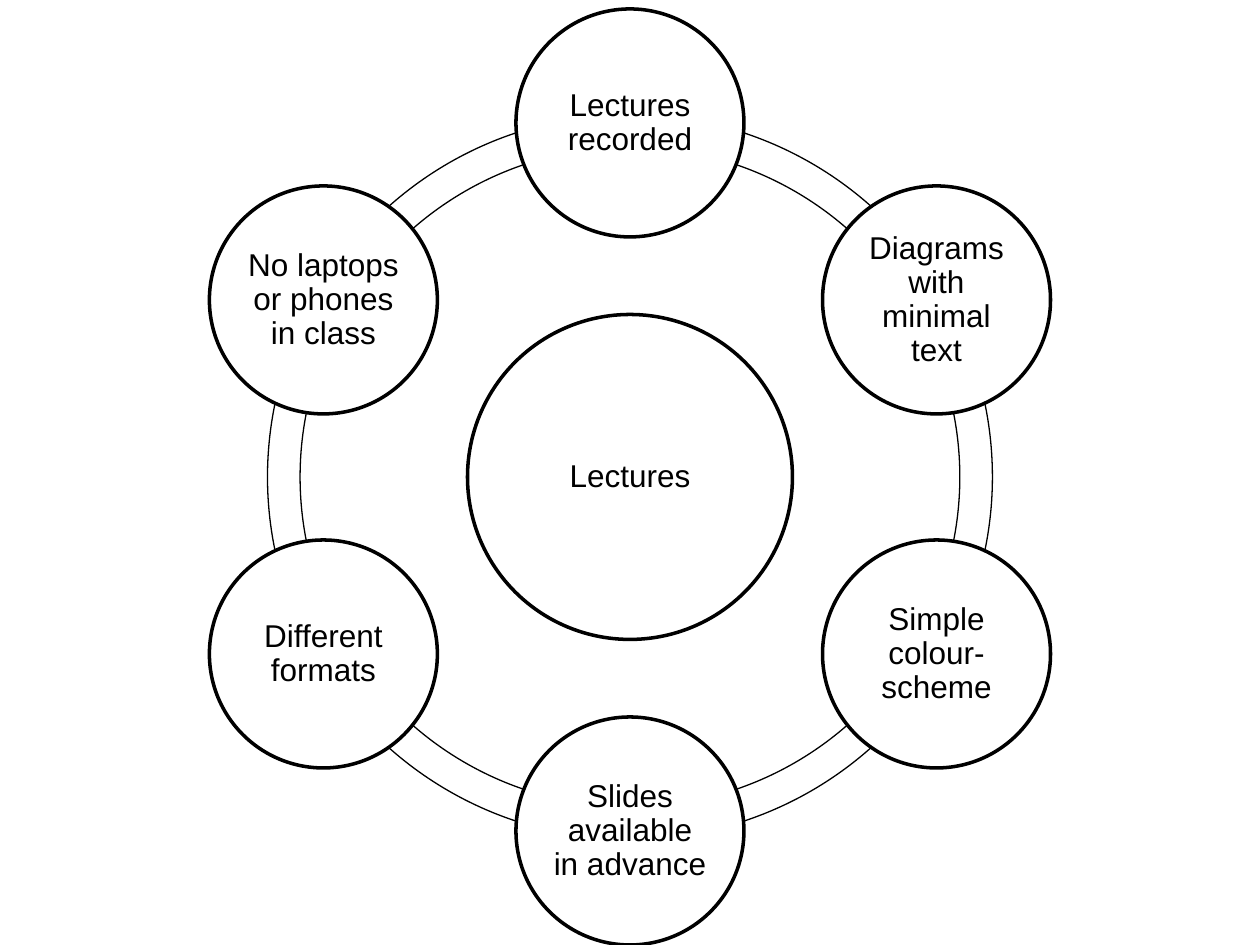
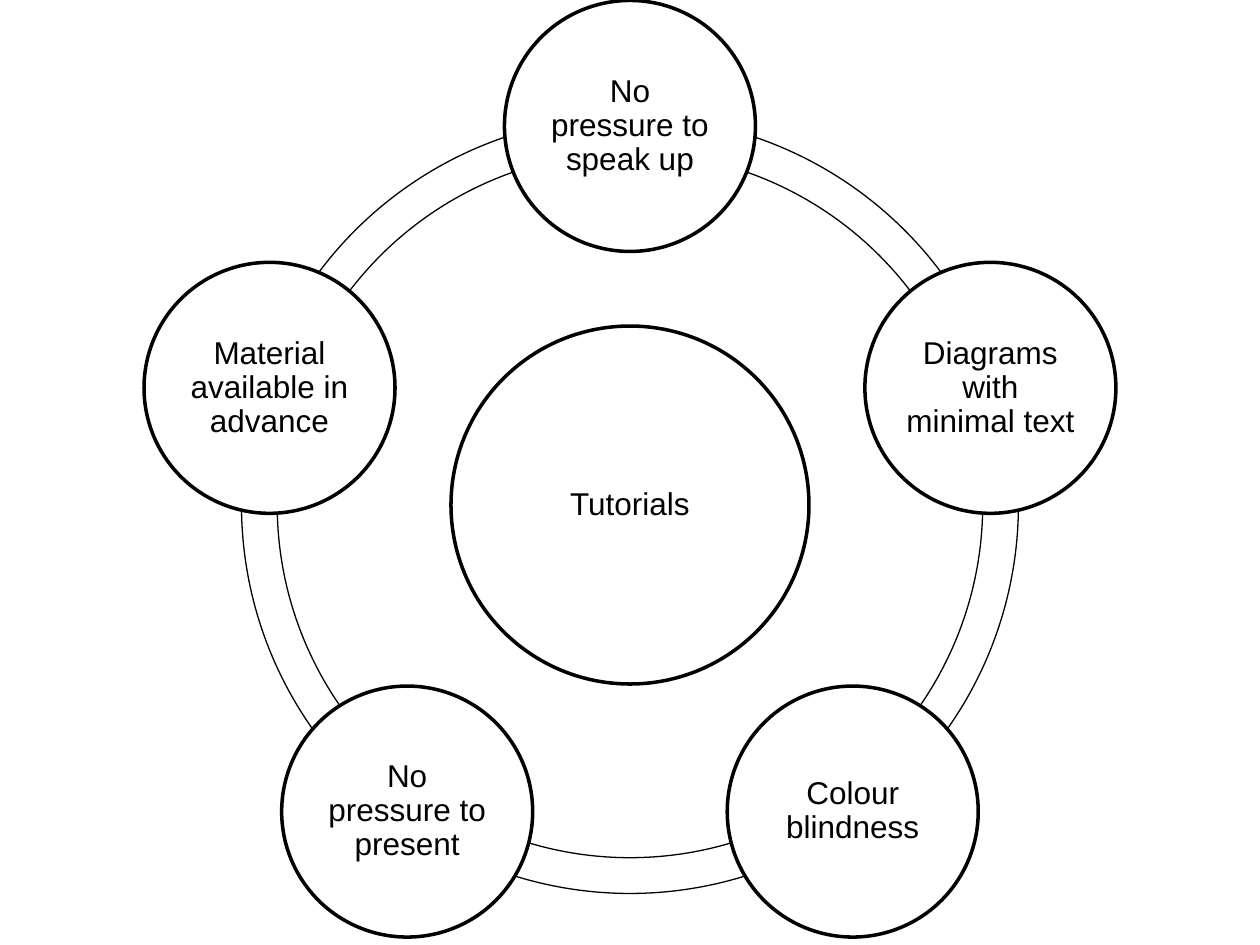
from dataclasses import dataclass
from math import cos, radians, sin

from pptx import Presentation
from pptx.dml.color import RGBColor
from pptx.enum.shapes import MSO_SHAPE as Shape
from pptx.enum.text import MSO_ANCHOR as Anchor, PP_ALIGN as Align
from pptx.util import Emu, Pt

# Shared look
EMU_PER_PX = 914400 // 126
SLIDE_WIDTH, SLIDE_HEIGHT = 1260, 945
CENTRE_X = SLIDE_WIDTH // 2
COLOURS = {"ink": "000000", "paper": "FFFFFF"}
FONT = "Arial"
TEXT_SIZE = 18
LINE_SPACING = 0.9
INSET = 3
TOP_ANGLE = 270
ANGLE_UNIT = 0.6  # adjustment value per degree


@dataclass
class Wheel:
    """A hub topic with its points spread clockwise around a ring."""
    topic: str
    points: list
    centre_y: int
    orbit: int
    hub_size: int
    point_size: int
    ring_size: int
    ring_depth: float


WHEELS = [
    Wheel("Lectures",
          ["Lectures recorded", "Diagrams with minimal text",
           "Simple colour-scheme", "Slides available in advance",
           "Different formats", "No laptops or phones in class"],
          centre_y=477, orbit=354, hub_size=325, point_size=228,
          ring_size=725, ring_depth=0.045),
    Wheel("Tutorials",
          ["No pressure to speak up", "Diagrams with minimal text",
           "Colour blindness", "No pressure to present",
           "Material available in advance"],
          centre_y=505, orbit=379, hub_size=358, point_size=251,
          ring_size=777, ring_depth=0.046),
]


def px(length):
    return Emu(round(length * EMU_PER_PX))


def colour(name):
    return RGBColor.from_string(COLOURS[name])


def add_outlined(slide, kind, x, y, size, line_width):
    """Add a square-framed shape centred on x, y with an ink outline."""
    outlined = slide.shapes.add_shape(
        kind, px(x - size / 2), px(y - size / 2), px(size), px(size))
    outlined.shadow.inherit = False
    outlined.line.color.rgb = colour("ink")
    outlined.line.width = Pt(line_width)
    return outlined


def add_ring_segment(slide, wheel, start, end):
    segment = add_outlined(slide, Shape.BLOCK_ARC, CENTRE_X, wheel.centre_y,
                           wheel.ring_size, 0.75)
    segment.fill.background()
    segment.adjustments[0] = start % 360 * ANGLE_UNIT
    segment.adjustments[1] = end % 360 * ANGLE_UNIT
    segment.adjustments[2] = wheel.ring_depth


def add_bubble(slide, words, x, y, size):
    bubble = add_outlined(slide, Shape.OVAL, x, y, size, 2)
    bubble.fill.solid()
    bubble.fill.fore_color.rgb = colour("paper")

    frame = bubble.text_frame
    frame.word_wrap = True
    frame.vertical_anchor = Anchor.MIDDLE
    frame.margin_left = frame.margin_right = px(INSET)
    frame.margin_top = frame.margin_bottom = px(INSET)

    label = frame.paragraphs[0]
    label.alignment = Align.CENTER
    label.line_spacing = LINE_SPACING
    run = label.add_run()
    run.text = words
    run.font.name = FONT
    run.font.size = Pt(TEXT_SIZE)
    run.font.color.rgb = colour("ink")


def add_wheel(slide, wheel):
    step = 360 / len(wheel.points)
    angles = [TOP_ANGLE + step * turn for turn in range(len(wheel.points))]

    # Ring behind the bubbles
    for angle in angles:
        add_ring_segment(slide, wheel, angle, angle + step)

    # Hub, then the points around it
    add_bubble(slide, wheel.topic, CENTRE_X, wheel.centre_y, wheel.hub_size)
    for point, angle in zip(wheel.points, angles):
        add_bubble(slide, point,
                   CENTRE_X + wheel.orbit * cos(radians(angle)),
                   wheel.centre_y + wheel.orbit * sin(radians(angle)),
                   wheel.point_size)


def main():
    deck = Presentation()
    deck.slide_width, deck.slide_height = px(SLIDE_WIDTH), px(SLIDE_HEIGHT)
    blank = deck.slide_layouts[6]
    for wheel in WHEELS:
        add_wheel(deck.slides.add_slide(blank), wheel)
    deck.save("out.pptx")


if __name__ == "__main__":
    main()
